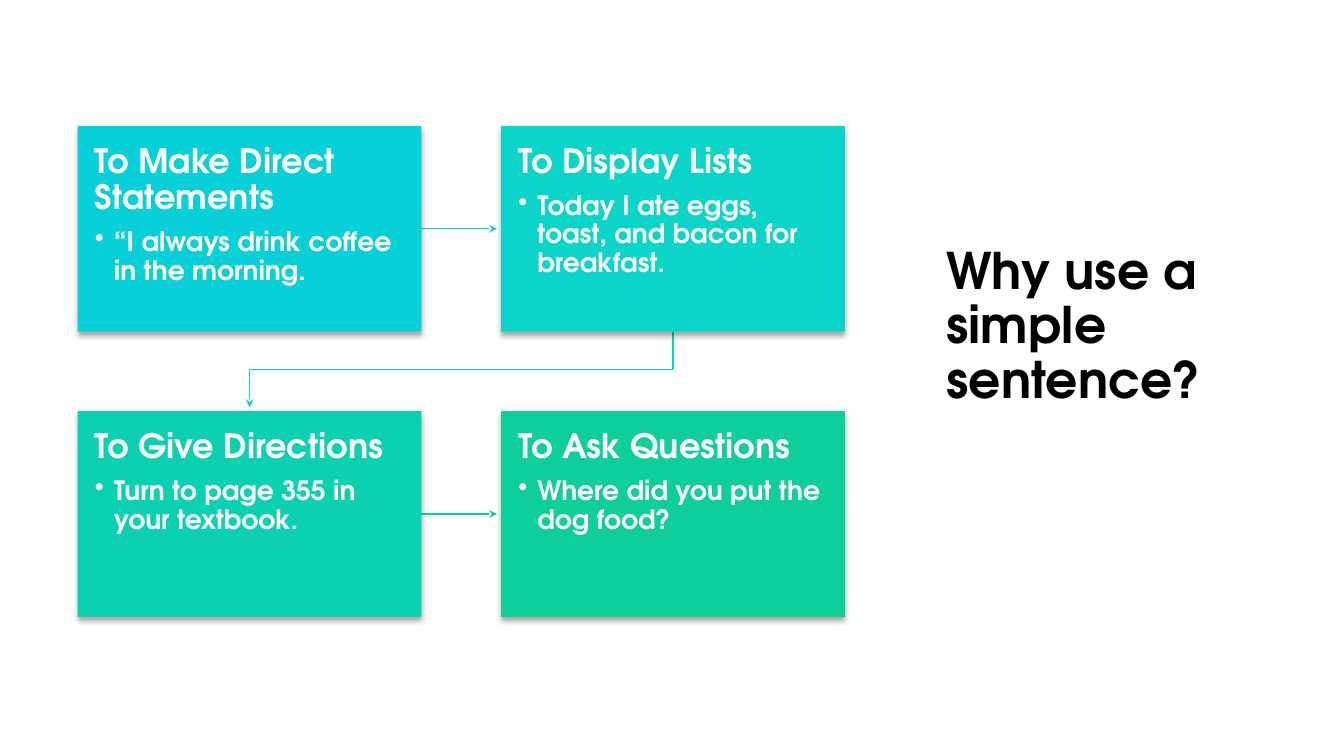
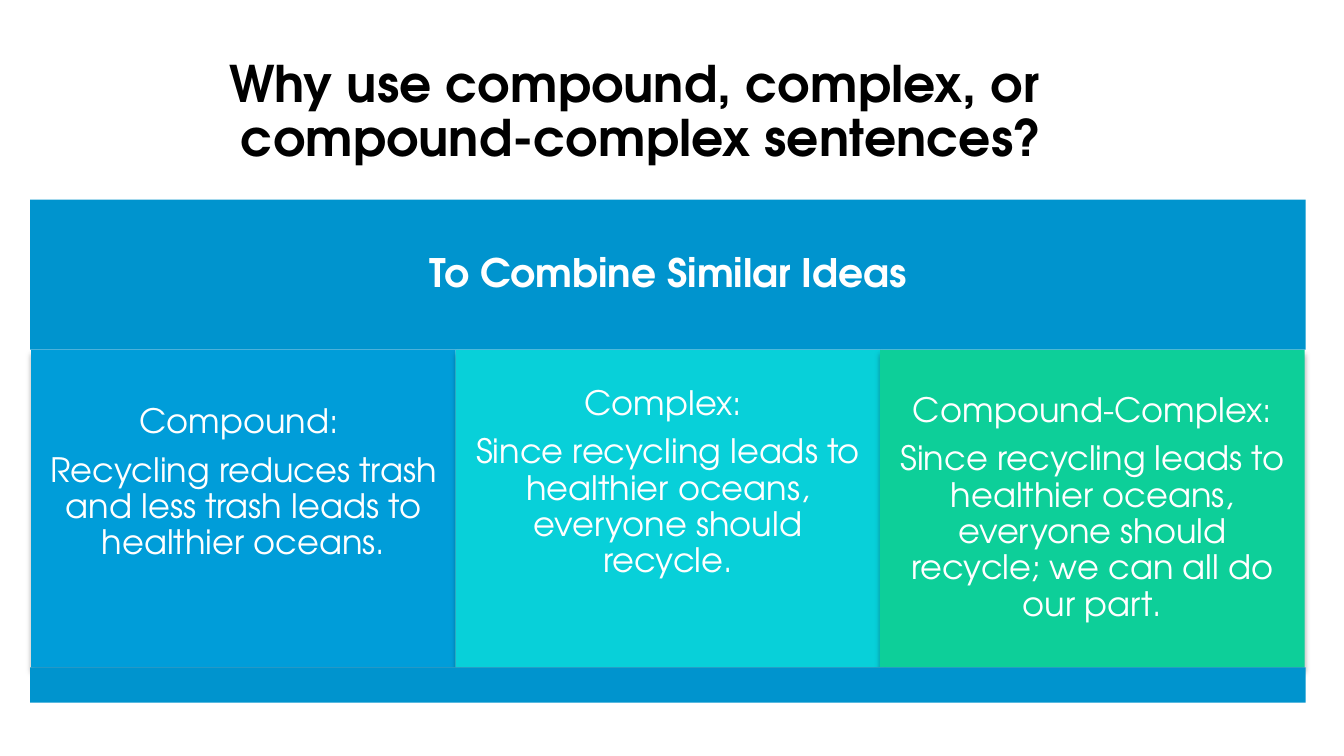
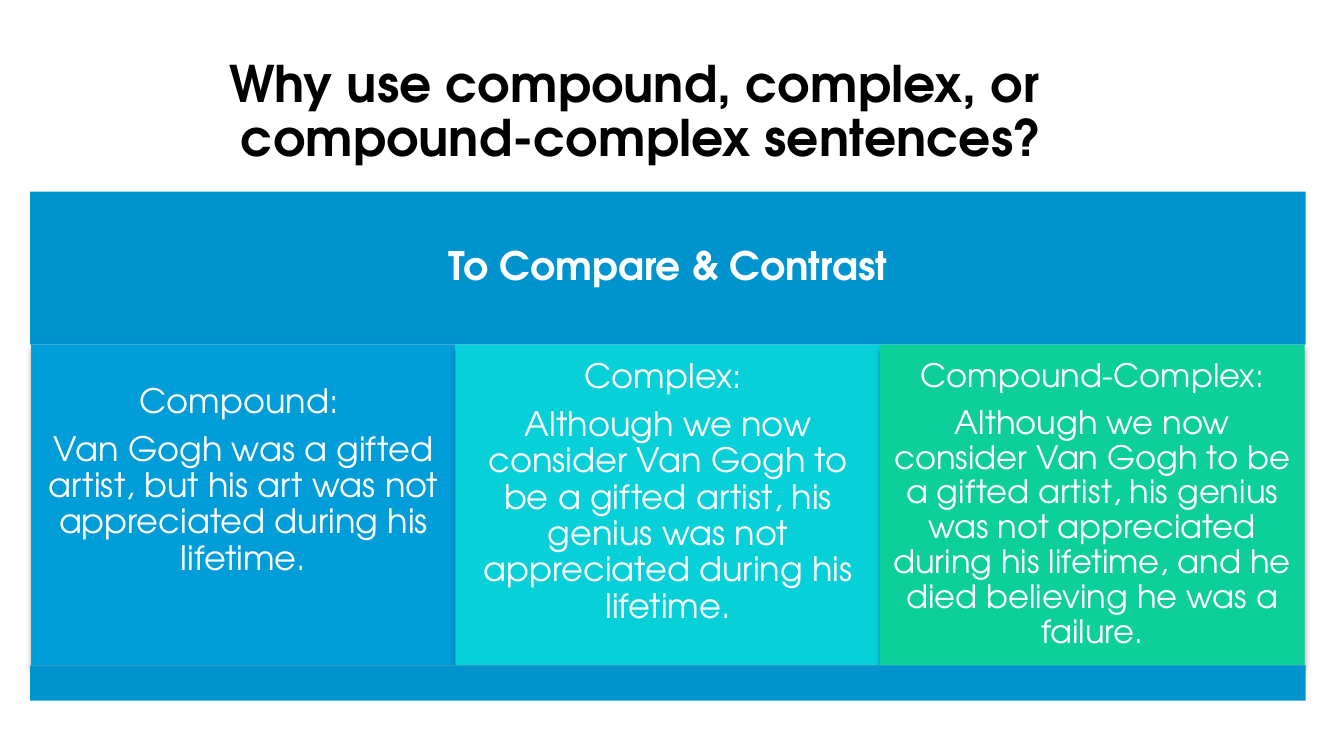
from dataclasses import dataclass

from lxml import etree
from pptx import Presentation
from pptx import util as u
from pptx.dml.color import RGBColor
from pptx.enum import shapes, text
from pptx.oxml import ns

ALIGN = text.PP_ALIGN
ANCHOR = text.MSO_ANCHOR


@dataclass(frozen=True)
class Theme:
    font: str = "TeX Gyre Adventor"
    ink: str = "000000"
    paper: str = "FFFFFF"
    band: str = "0094CE"
    steps: tuple = ("08D0D9", "0AD5C8", "0CD1B0", "0ECE99")
    arrows: tuple = ("08D0D9", "0BD3BB", "0ECE99")
    columns: tuple = ("009DD9", "08D0D9", "0DCF99")
    title_size: float = 36
    band_size: float = 28
    heading_size: float = 24
    bullet_size: float = 19
    space_before: float = 8.4


THEME = Theme()


def add_xml(parent, tag, **attributes):
    child = etree.SubElement(parent, ns.qn(tag))
    for key, value in attributes.items():
        child.set(key, str(value))
    return child


def write(frame, words, *, size, color=THEME.paper, bold=False,
          align=ALIGN.LEFT, before=0, bullet=False):
    """Put one formatted paragraph at the end of a text frame."""
    first = frame.paragraphs[0]
    paragraph = first if not first.runs else frame.add_paragraph()
    if bullet:
        properties = paragraph._p.get_or_add_pPr()
        properties.set("marL", str(u.Inches(0.19)))
        properties.set("indent", str(-u.Inches(0.19)))
        add_xml(properties, "a:buChar", char="•")
    paragraph.text = words
    paragraph.alignment = align
    paragraph.line_spacing = 0.9
    if before:
        paragraph.space_before = u.Pt(before)
    font = paragraph.font
    font.name, font.size, font.bold = THEME.font, u.Pt(size), bold
    font.color.rgb = RGBColor.from_string(color)


class Deck:
    """Holds the style and the slide being built."""

    def __init__(self, theme):
        self.theme = theme
        self.file = Presentation()
        self.file.slide_width = u.Inches(13.33)
        self.file.slide_height = u.Inches(7.5)
        self.slide = None

    def new_slide(self):
        self.slide = self.file.slides.add_slide(self.file.slide_layouts[6])

    def set_frame(self, frame, insets, anchor):
        frame.word_wrap = True
        frame.vertical_anchor = anchor
        (frame.margin_left, frame.margin_top,
         frame.margin_right, frame.margin_bottom) = map(u.Inches, insets)
        return frame

    def title(self, words, box, align=ALIGN.LEFT, anchor=ANCHOR.TOP):
        shape = self.slide.shapes.add_textbox(*map(u.Inches, box))
        frame = self.set_frame(shape.text_frame, (0.1, 0.05, 0.1, 0.05), anchor)
        write(frame, words, size=self.theme.title_size, color=self.theme.ink,
              bold=True, align=align)

    def panel(self, box, fill, insets=(0.1,) * 4, anchor=ANCHOR.MIDDLE,
              shadow=False):
        """Draw a filled rectangle and return its text frame."""
        shape = self.slide.shapes.add_shape(
            shapes.MSO_SHAPE.RECTANGLE, *map(u.Inches, box))
        shape.fill.solid()
        shape.fill.fore_color.rgb = RGBColor.from_string(fill)
        shape.line.fill.background()
        shape.shadow.inherit = False
        if shadow:
            effects = shape._element.spPr.find(ns.qn("a:effectLst"))
            outer = add_xml(effects, "a:outerShdw", blurRad=u.Pt(4),
                            dist=u.Pt(3), dir=90 * 60000, rotWithShape=0)
            black = add_xml(outer, "a:srgbClr", val=self.theme.ink)
            add_xml(black, "a:alpha", val=35000)
        return self.set_frame(shape.text_frame, insets, anchor)

    def arrow(self, start, end, color, bent=False):
        """Draw an arrow; a bent one leaves downwards and turns twice."""
        kind = shapes.MSO_CONNECTOR.STRAIGHT
        (x1, y1), (x2, y2) = start, end
        if bent:
            # A quarter turn makes the elbow run down, across, down
            kind = shapes.MSO_CONNECTOR.ELBOW
            mid_x, mid_y = (x1 + x2) / 2, (y1 + y2) / 2
            half_w, half_h = (y2 - y1) / 2, (x1 - x2) / 2
            x1, x2 = mid_x - half_w, mid_x + half_w
            y1, y2 = mid_y - half_h, mid_y + half_h
        line = self.slide.shapes.add_connector(
            kind, *map(u.Inches, (x1, y1, x2, y2)))
        properties = line._element.spPr
        if bent:
            properties.find(ns.qn("a:xfrm")).set("rot", str(90 * 60000))
        line.line.color.rgb = RGBColor.from_string(color)
        line.line.width = u.Pt(1)
        add_xml(line.line._get_or_add_ln(), "a:tailEnd", type="stealth")
        add_xml(properties, "a:effectLst")

    def reasons(self, title, steps):
        """Four steps in a two by two grid, joined by arrows."""
        self.new_slide()
        self.title(title, (9.29, 2.39, 2.91, 2.47))
        left, top, width, height = 0.77, 1.25, 3.41, 2.04
        gap, reach = 0.79, 0.75
        corners = [(left + column * (width + gap), top + row * (height + gap))
                   for row in range(2) for column in range(2)]
        # Arrows
        for index, color in ((0, self.theme.arrows[0]), (2, self.theme.arrows[2])):
            x, y = corners[index][0] + width, corners[index][1] + height / 2
            self.arrow((x, y), (x + reach, y), color)
        bottom = top + height
        self.arrow((corners[1][0] + width / 2, bottom),
                   (corners[2][0] + width / 2, bottom + reach),
                   self.theme.arrows[1], bent=True)
        # Step tiles
        for corner, fill, (heading, example) in zip(
                corners, self.theme.steps, steps):
            frame = self.panel((*corner, width, height), fill,
                               (0.17, 0.18, 0.17, 0.18), ANCHOR.TOP, shadow=True)
            write(frame, heading, size=self.theme.heading_size, bold=True)
            write(frame, example, size=self.theme.bullet_size, bold=True,
                  before=self.theme.space_before, bullet=True)

    def comparison(self, title, purpose, tops, columns):
        """A header band, three example columns and a footer band."""
        self.new_slide()
        self.title(title, (0.3, 0.4, 12.12, 1.45), ALIGN.CENTER, ANCHOR.MIDDLE)
        left, width = 0.3, 12.65
        band_top, column_top, footer_top = tops
        # Bands
        header = self.panel((left, band_top, width, column_top - band_top),
                            self.theme.band)
        write(header, purpose, size=self.theme.band_size, bold=True,
              align=ALIGN.CENTER)
        # Columns
        column_width = 4.21
        for index, (kind, example, size, bottom_inset) in enumerate(columns):
            box = (left + 0.01 + index * column_width, column_top,
                   column_width, footer_top - column_top)
            frame = self.panel(box, self.theme.columns[index],
                               (0.1, 0.1, 0.1, bottom_inset), shadow=True)
            write(frame, kind, size=size, align=ALIGN.CENTER)
            write(frame, example, size=size, align=ALIGN.CENTER,
                  before=self.theme.space_before)
        self.panel((left, footer_top, width, 0.35), self.theme.band)


def main():
    deck = Deck(THEME)
    deck.reasons("Why use a simple sentence?", [
        ("To Make Direct Statements", "“I always drink coffee in the morning."),
        ("To Display Lists", "Today I ate eggs, toast, and bacon for breakfast."),
        ("To Give Directions", "Turn to page 355 in your textbook."),
        ("To Ask Questions", "Where did you put the dog food?"),
    ])

    question = "Why use compound, complex, or \vcompound-complex sentences?"
    size = THEME.heading_size
    deck.comparison(question, "To Combine Similar Ideas", (1.98, 3.47, 6.62), [
        ("Compound: ", "Recycling reduces trash and less trash leads to "
         "healthier oceans.", size, 0.6),
        ("Complex: ", "Since recycling leads to healthier oceans, everyone "
         "should recycle.", size, 0.6),
        ("Compound-Complex:", "Since recycling leads to healthier oceans, "
         "everyone should recycle; we can all do our part.", size, 0.1),
    ])
    deck.comparison(question, "To Compare & Contrast", (1.9, 3.42, 6.6), [
        ("Compound: ", "Van Gogh was a gifted artist, but his art was not "
         "appreciated during his lifetime.", size, 0.58),
        ("Complex: ", "Although we now consider Van Gogh to be a gifted artist, "
         "his genius was not appreciated during his lifetime.", size, 0.35),
        ("Compound-Complex:", "Although we now consider Van Gogh to be a gifted "
         "artist, his genius was not appreciated during his lifetime, and he "
         "died believing he was a failure.", 23, 0.1),
    ])
    deck.file.save("out.pptx")


if __name__ == "__main__":
    main()
